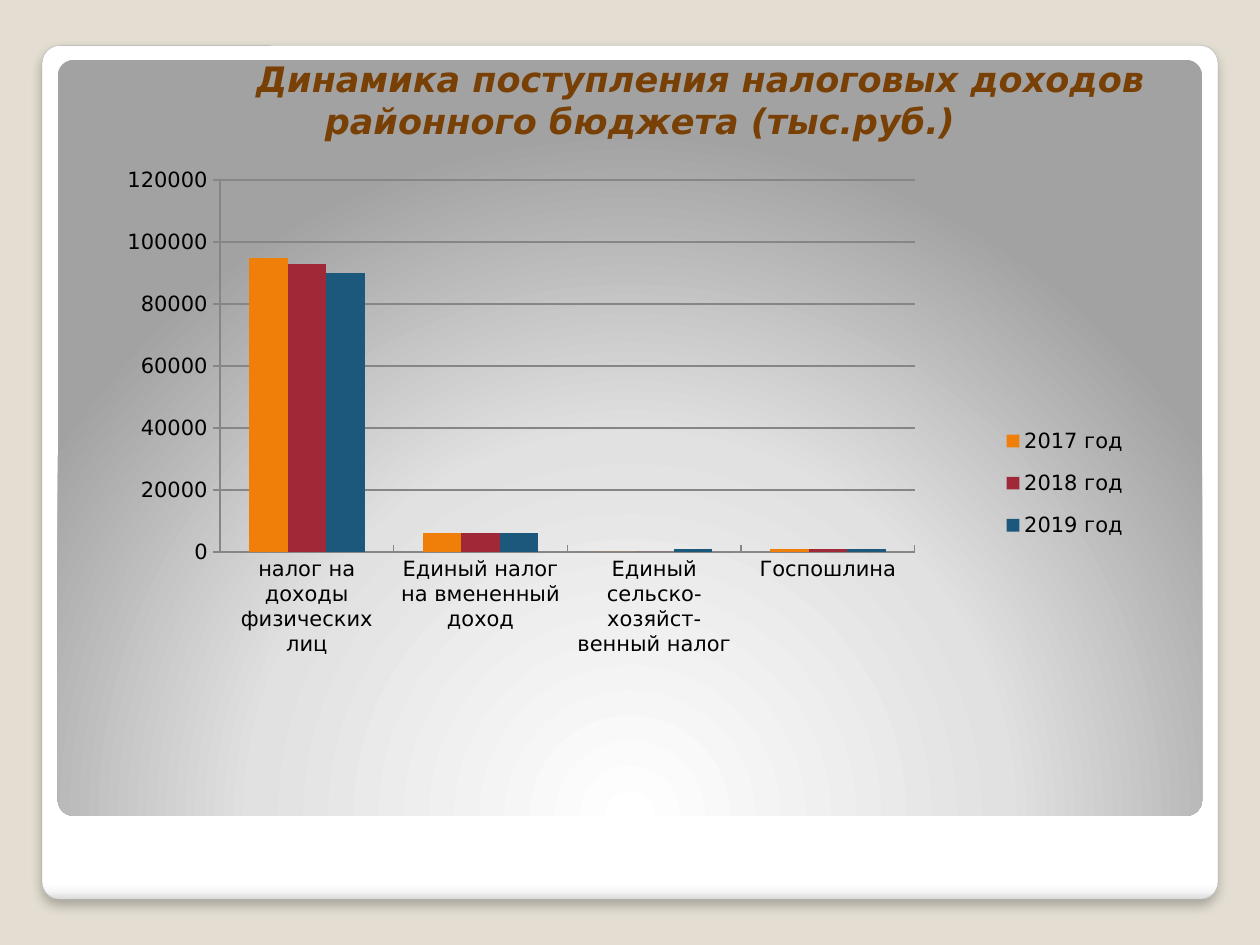
from dataclasses import dataclass

from pptx import Presentation
from pptx.chart.data import CategoryChartData
from pptx.dml.color import RGBColor
from pptx.enum.chart import XL_CHART_TYPE, XL_LEGEND_POSITION, XL_TICK_MARK
from pptx.enum.shapes import MSO_SHAPE
from pptx.enum.text import MSO_ANCHOR, PP_ALIGN
from pptx.oxml import parse_xml
from pptx.oxml.ns import nsdecls, qn
from pptx.util import Pt

ROUND_RECT = MSO_SHAPE.ROUNDED_RECTANGLE
COLUMNS = XL_CHART_TYPE.COLUMN_CLUSTERED
RIGHT = XL_LEGEND_POSITION.RIGHT
TICK_IN, TICK_CROSS = XL_TICK_MARK.INSIDE, XL_TICK_MARK.CROSS
BOTTOM, CENTER = MSO_ANCHOR.BOTTOM, PP_ALIGN.CENTER


@dataclass(frozen=True)
class Theme:
    """Colours, font and type sizes of the slide."""
    font: str = "DejaVu Sans"
    title_size: int = 20
    chart_size: int = 12
    background: str = "E3DED1"
    title: str = "784004"
    text: str = "000000"
    edge: str = "A4A4A4"
    grid: str = "868686"
    series: tuple = ("F07F09", "9F2936", "1B587C")
    frame: tuple = ((0, "FFFFFF"), (98, "FFFFFF"), (99, "F7F7F7"), (100, "DADADA"))
    glow: tuple = ((0, "FFFFFF"), (55, "E1E1E1"), (100, "A2A2A2"))


THEME = Theme()
LINEAR = '<a:lin ang="5400000" scaled="0"/>'
RADIAL = ('<a:path path="circle"><a:fillToRect l="50000" t="175000" '
          'r="50000" b="-75000"/></a:path>')
SHADOW = (f'<a:outerShdw {nsdecls("a")} blurRad="{Pt(6)}" dist="{Pt(4)}" dir="5400000" '
          'algn="t" rotWithShape="0"><a:srgbClr val="000000"><a:alpha val="25000"/>'
          '</a:srgbClr></a:outerShdw>')

TITLE = "Динамика поступления налоговых доходов районного бюджета (тыс.руб.)"
CATEGORIES = ("налог на доходы физических лиц", "Единый налог на вмененный доход",
              "Единый сельско- хозяйст- венный налог", "Госпошлина")
REVENUES = {
    "2017 год": (95000, 6000, 0, 1000),
    "2018 год": (93000, 6000, 0, 1000),
    "2019 год": (90000, 6000, 1000, 1000),
}


def rgb(color):
    """Turn a hex string into a colour."""
    return RGBColor.from_string(color)


def format_font(font, size, color, bold=False, italic=False):
    """Apply the theme font with the given format."""
    font.name, font.size, font.color.rgb = THEME.font, Pt(size), rgb(color)
    font.bold, font.italic = bold, italic


def add_panel(s, box, stops, direction, edge=None, shadow=False):
    """Add a rounded panel with a gradient fill."""
    sp = s.shapes.add_shape(ROUND_RECT, *map(Pt, box))
    sp.adjustments[0] = 0.021
    sp.shadow.inherit = False
    sp.fill.gradient()
    spPr = sp._element.spPr
    gs = "".join(f'<a:gs pos="{pos * 1000}"><a:srgbClr val="{color}"/></a:gs>'
                 for pos, color in stops)
    spPr.replace(spPr.find(qn("a:gradFill")), parse_xml(
        f'<a:gradFill {nsdecls("a")} rotWithShape="1"><a:gsLst>{gs}</a:gsLst>'
        f'{direction}</a:gradFill>'))
    if edge:
        sp.line.color.rgb, sp.line.width = rgb(edge), Pt(0.16)
    else:
        sp.line.fill.background()
    if shadow:
        spPr.find(qn("a:effectLst")).append(parse_xml(SHADOW))


def set_title(s, text, box, indent):
    """Place the title with its first line indented."""
    sp = s.shapes.title
    sp.left, sp.top, sp.width, sp.height = map(Pt, box)
    tf = sp.text_frame
    tf.word_wrap, tf.vertical_anchor = True, BOTTOM
    p = tf.paragraphs[0]
    p.alignment = CENTER
    p._p.get_or_add_pPr().set("indent", str(Pt(indent)))
    r = p.add_run()
    r.text = text
    format_font(r.font, THEME.title_size, THEME.title, bold=True, italic=True)


def place(element, x, y, w, h, inner=False):
    """Fix a chart part at fractions of the chart area."""
    layout = element.find(qn("c:layout"))
    if layout is not None:
        element.remove(layout)
    target = '<c:layoutTarget val="inner"/>' if inner else ""
    layout = parse_xml(
        f'<c:layout {nsdecls("c")}><c:manualLayout>{target}<c:xMode val="edge"/>'
        f'<c:yMode val="edge"/><c:x val="{x}"/><c:y val="{y}"/><c:w val="{w}"/>'
        f'<c:h val="{h}"/></c:manualLayout></c:layout>')
    element.insert(0 if inner else 1, layout)


def format_axis(axis, tick):
    """Set the line and tick marks of an axis."""
    axis.major_tick_mark = tick
    axis.format.line.color.rgb, axis.format.line.width = rgb(THEME.grid), Pt(0.75)


def add_column_chart(s, box):
    """Add the clustered columns of revenue by tax and year."""
    data = CategoryChartData()
    data.categories = CATEGORIES
    for name, values in REVENUES.items():
        data.add_series(name, values)
    chart = s.shapes.add_chart(COLUMNS, *map(Pt, box), data).chart
    chart.has_title = False
    format_font(chart.font, THEME.chart_size, THEME.text)
    plot = chart.plots[0]
    plot.gap_width, plot.overlap, plot.vary_by_categories = 150, 0, False
    for series, color in zip(plot.series, THEME.series):
        series.format.fill.solid()
        series.format.fill.fore_color.rgb = rgb(color)
    format_axis(chart.category_axis, TICK_IN)
    axis = chart.value_axis
    format_axis(axis, TICK_CROSS)
    axis.minimum_scale, axis.maximum_scale, axis.major_unit = 0, 120000, 20000
    axis.has_major_gridlines = True
    line = axis.major_gridlines.format.line
    line.color.rgb, line.width = rgb(THEME.grid), Pt(0.75)
    chart.has_legend = True
    chart.legend.position, chart.legend.include_in_layout = RIGHT, False
    place(chart.legend._element, 0.83, 0.34, 0.12, 0.2)
    place(plot._element.getparent(), 0.135, 0.018, 0.621, 0.518, inner=True)


def main():
    """Build and save the slide."""
    prs = Presentation()
    prs.slide_width, prs.slide_height = Pt(720), Pt(540)
    s = prs.slides.add_slide(prs.slide_layouts[5])
    s.background.fill.solid()
    s.background.fill.fore_color.rgb = rgb(THEME.background)
    add_panel(s, (24, 26, 672, 488), THEME.frame, LINEAR, edge=THEME.edge, shadow=True)
    add_panel(s, (33, 34.2, 654, 432), THEME.glow, RADIAL)
    title = s.shapes.title._element
    title.getparent().append(title)
    set_title(s, TITLE, (28, 39.2, 675.4, 45.4), indent=69)
    add_column_chart(s, (39.4, 95.5, 639.4, 410.4))
    prs.save("out.pptx")


if __name__ == "__main__":
    main()
